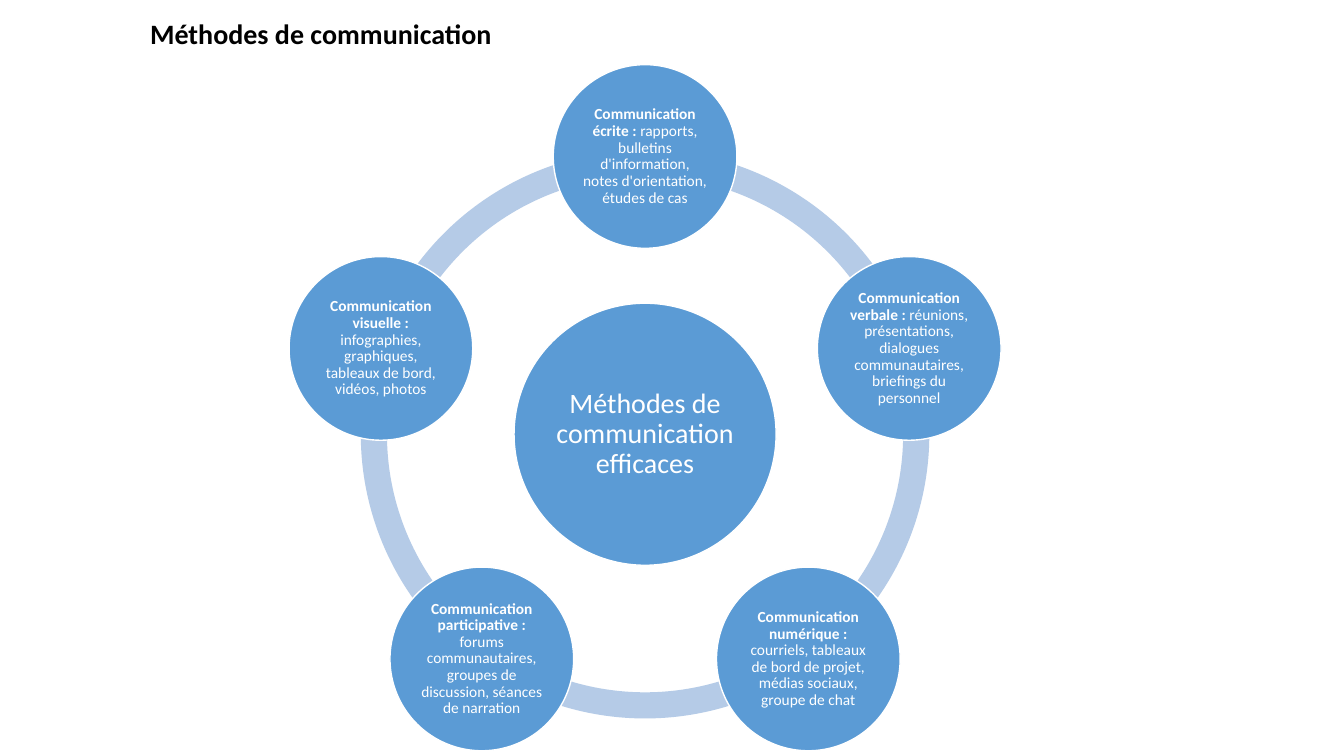
from math import cos, radians, sin

from pptx import Presentation
from pptx.dml.color import RGBColor
from pptx.enum.shapes import MSO_SHAPE
from pptx.enum.text import MSO_ANCHOR, MSO_AUTO_SIZE, PP_ALIGN
from pptx.util import Pt

ARC, OVAL = MSO_SHAPE.BLOCK_ARC, MSO_SHAPE.OVAL
LEFT, CENTER = PP_ALIGN.LEFT, PP_ALIGN.CENTER
TOP, MIDDLE = MSO_ANCHOR.TOP, MSO_ANCHOR.MIDDLE

TITLE = "Méthodes de communication"
HUB = "Méthodes de communication efficaces"
METHODS = [
    ("Communication écrite : ",
     "rapports, bulletins d'information, notes d'orientation, études de cas"),
    ("Communication verbale : ",
     "réunions, présentations, dialogues communautaires, briefings du personnel"),
    ("Communication numérique : ",
     "courriels, tableaux de bord de projet, médias sociaux, groupe de chat"),
    ("Communication participative : ",
     "forums communautaires, groupes de discussion, séances de narration"),
    ("Communication visuelle : ",
     "infographies, graphiques, tableaux de bord, vidéos, photos"),
]

FONT = "Calibri"
BLACK, WHITE, BLUE, PALE_BLUE = "000000", "FFFFFF", "5B9BD5", "B5CBE7"
CENTER_X, CENTER_Y = 460.8, 310.2
ORBIT = 198.4
RING_SIZE, HUB_SIZE, METHOD_SIZE = 406.1, 187.2, 131.2
RING_THICKNESS = 0.046
ADJUSTMENT_PER_DEGREE = 0.6
STEP = 360 / len(METHODS)


def color(value):
    return RGBColor.from_string(value)


def style_run(run, size, hue, bold):
    run.font.name = FONT
    run.font.size = Pt(size)
    run.font.bold = bold
    run.font.color.rgb = color(hue)


def add_centered(kind, x, y, size, fill):
    shape = slide.shapes.add_shape(
        kind, Pt(x - size / 2), Pt(y - size / 2), Pt(size), Pt(size))
    shape.shadow.inherit = False
    shape.fill.solid()
    shape.fill.fore_color.rgb = color(fill)
    shape.line.fill.background()
    return shape


def add_circle(x, y, diameter, parts, size, margin):
    circle = add_centered(OVAL, x, y, diameter, BLUE)
    circle.line.color.rgb = color(WHITE)
    circle.line.width = Pt(1)
    frame = circle.text_frame
    frame.word_wrap = True
    frame.vertical_anchor = MIDDLE
    frame.margin_left = frame.margin_right = Pt(margin)
    frame.margin_top = frame.margin_bottom = Pt(margin)
    paragraph = frame.paragraphs[0]
    paragraph.alignment = CENTER
    paragraph.line_spacing = 0.9
    for words, bold in parts:
        run = paragraph.add_run()
        run.text = words
        style_run(run, size, WHITE, bold)


prs = Presentation()
prs.slide_width, prs.slide_height = Pt(960), Pt(540)
slide = prs.slides.add_slide(prs.slide_layouts[5])

title = slide.shapes.title
title.left, title.top, title.width, title.height = Pt(100), Pt(8), Pt(290), Pt(53)
title.text_frame.text = TITLE
title.text_frame.auto_size = MSO_AUTO_SIZE.NONE
title.text_frame.vertical_anchor = TOP
title.text_frame.paragraphs[0].alignment = LEFT
style_run(title.text_frame.paragraphs[0].runs[0], 20, BLACK, True)

angles = [(270 + index * STEP) % 360 for index in range(len(METHODS))]

for angle in angles:
    arc = add_centered(ARC, CENTER_X, CENTER_Y, RING_SIZE, PALE_BLUE)
    arc.adjustments[0] = angle * ADJUSTMENT_PER_DEGREE
    arc.adjustments[1] = (angle + STEP) % 360 * ADJUSTMENT_PER_DEGREE
    arc.adjustments[2] = RING_THICKNESS

add_circle(CENTER_X, CENTER_Y, HUB_SIZE, [(HUB, False)], 20, 2)
for angle, (method, examples) in zip(angles, METHODS):
    x = CENTER_X + ORBIT * cos(radians(angle))
    y = CENTER_Y + ORBIT * sin(radians(angle))
    add_circle(x, y, METHOD_SIZE, [(method, True), (examples, False)], 11, 1.4)

prs.save("out.pptx")
